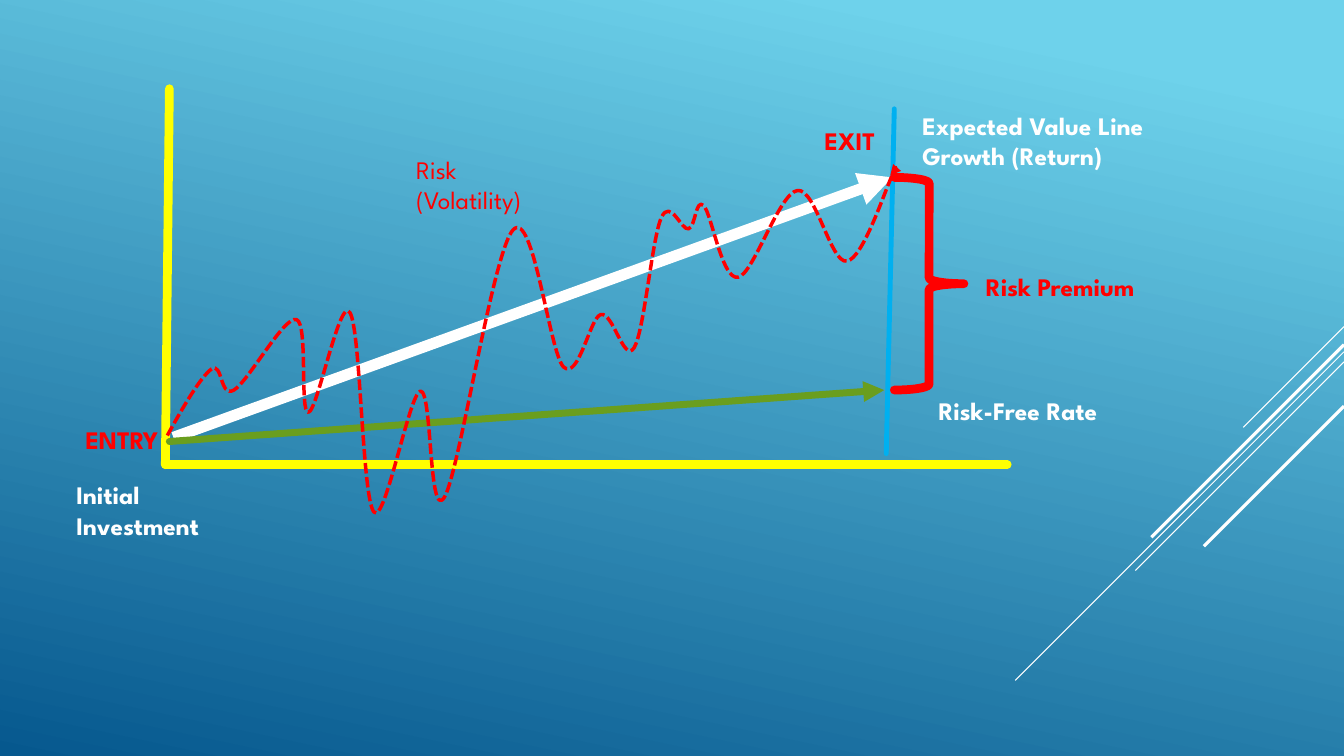
import pptx
import pptx.dml.color
import pptx.enum.dml
import pptx.enum.shapes
import pptx.enum.text
import pptx.oxml.ns
import pptx.oxml.xmlchemy
import pptx.util
from pptx.util import Inches

RGBColor = pptx.dml.color.RGBColor
WHITE = RGBColor(0xFF, 0xFF, 0xFF)
YELLOW = RGBColor(0xFF, 0xFF, 0x00)
GREEN = RGBColor(0x6A, 0x9E, 0x1F)
BLUE = RGBColor(0x00, 0xB0, 0xF0)
RED = RGBColor(0xFF, 0x00, 0x00)
SKY = RGBColor(0x6E, 0xD2, 0xEB)
NAVY = RGBColor(0x06, 0x58, 0x8E)
FONT = "League Spartan"

# Diagonal accents at the right edge: top, horizontal run, weight
RIGHT_EDGE = 13.33
ACCENTS = [(3.24, 1.0, 0.75), (3.49, 3.26, 0.75), (3.59, 2.07, 0.75),
           (3.42, 1.91, 2.25), (4.03, 1.39, 2.25)]

# Chart lines: start, end, colour, weight, arrowhead, round ends
CHART_LINES = [
    ((1.68, 0.88), (1.64, 4.61), YELLOW, 6.25, False, True),
    ((9.99, 4.61), (1.64, 4.61), YELLOW, 6.25, False, True),
    ((1.72, 4.34), (8.85, 1.76), WHITE, 8, True, False),
    ((1.68, 4.38), (8.77, 3.87), GREEN, 5, True, True),
    ((8.87, 1.08), (8.79, 4.5), BLUE, 3.5, False, True),
]

# Labels: paragraphs, left, top, width, height, colour, bold
LABELS = [
    (["Expected Value Line Growth (Return)"], 9.05, 1.04, 2.92, 0.71, WHITE, True),
    (["EXIT"], 8.08, 1.19, 1.53, 0.4, RED, True),
    (["ENTRY"], 0.75, 4.16, 1.53, 0.4, RED, True),
    (["Initial", "Investment"], 0.66, 4.71, 2.92, 0.71, WHITE, True),
    (["Risk-Free Rate"], 9.21, 3.87, 2.92, 0.4, WHITE, True),
    (["Risk Premium"], 9.68, 2.64, 2.92, 0.4, RED, True),
    (["Risk (Volatility)"], 4.03, 1.48, 1.51, 0.71, RED, False),
]

# Volatility curve: each row is two control points and an end point
CURVE_START = (1.66, 4.32)
CURVE = [
    ((1.82, 4.03), (1.99, 3.74), (2.1, 3.66)),
    ((2.21, 3.59), (2.18, 3.95), (2.32, 3.87)),
    ((2.46, 3.79), (2.82, 3.13), (2.94, 3.17)),
    ((3.06, 3.2), (2.97, 4.1), (3.06, 4.09)),
    ((3.15, 4.08), (3.37, 2.93), (3.47, 3.1)),
    ((3.58, 3.26), (3.59, 4.94), (3.71, 5.08)),
    ((3.82, 5.21), (4.06, 3.9), (4.17, 3.88)),
    ((4.29, 3.86), (4.25, 5.2), (4.41, 4.93)),
    ((4.56, 4.67), (4.89, 2.49), (5.09, 2.28)),
    ((5.29, 2.06), (5.45, 3.5), (5.59, 3.64)),
    ((5.74, 3.78), (5.85, 3.15), (5.96, 3.12)),
    ((6.08, 3.09), (6.19, 3.61), (6.29, 3.45)),
    ((6.39, 3.29), (6.47, 2.35), (6.56, 2.16)),
    ((6.65, 1.96), (6.76, 2.29), (6.83, 2.27)),
    ((6.9, 2.25), (6.9, 1.96), (6.98, 2.04)),
    ((7.06, 2.12), (7.16, 2.78), (7.32, 2.75)),
    ((7.47, 2.73), (7.73, 1.91), (7.91, 1.89)),
    ((8.09, 1.86), (8.24, 2.62), (8.4, 2.59)),
    ((8.56, 2.57), (8.78, 1.88), (8.85, 1.74)),
    ((8.92, 1.59), (8.83, 1.74), (8.83, 1.74)),
]


def new_element(tag):
    return pptx.oxml.xmlchemy.OxmlElement(tag)


def style_line(shape, color, weight, arrow=False, rounded=False):
    shape.line.color.rgb = color
    shape.line.width = pptx.util.Pt(weight)
    outline = shape._element.spPr.find(pptx.oxml.ns.qn("a:ln"))
    if rounded:
        outline.set("cap", "rnd")
    if arrow:
        tail = new_element("a:tailEnd")
        tail.set("type", "triangle")
        outline.append(tail)


def add_line(page, start, end, color, weight, arrow=False, rounded=False):
    line = page.shapes.add_connector(
        pptx.enum.shapes.MSO_CONNECTOR.STRAIGHT,
        *(Inches(value) for value in (*start, *end)))
    style_line(line, color, weight, arrow, rounded)
    line._element.spPr.append(new_element("a:effectLst"))


def add_label(page, lines, left, top, width, height, color, bold):
    box = page.shapes.add_textbox(*map(Inches, (left, top, width, height)))
    frame = box.text_frame
    frame.word_wrap = True
    frame.auto_size = pptx.enum.text.MSO_AUTO_SIZE.SHAPE_TO_FIT_TEXT
    frame.text = "\n".join(lines)
    for para in frame.paragraphs:
        para.font.name = FONT
        para.font.size = pptx.util.Pt(18)
        para.font.bold = bold
        para.font.color.rgb = color


def add_curve(page):
    points = [tuple(map(Inches, point)) for row in CURVE for point in row]
    builder = page.shapes.build_freeform(*map(Inches, CURVE_START))
    builder.add_line_segments(points, close=False)
    curve = builder.convert_to_shape()
    # Turn every three straight segments into one cubic segment
    segments = list(curve._element.iter(pptx.oxml.ns.qn("a:lnTo")))
    for first in range(0, len(segments), 3):
        cubic = new_element("a:cubicBezTo")
        segments[first].addprevious(cubic)
        for segment in segments[first:first + 3]:
            cubic.append(segment[0])
            segment.getparent().remove(segment)
    curve.shadow.inherit = False
    curve.fill.background()
    curve.line.dash_style = pptx.enum.dml.MSO_LINE.SQUARE_DOT
    style_line(curve, RED, 2.5, arrow=True)


def main():
    deck = pptx.Presentation()
    deck.slide_width, deck.slide_height = Inches(13.33), Inches(7.5)
    page = deck.slides.add_slide(deck.slide_layouts[6])

    # Background
    fill = page.background.fill
    fill.gradient()
    fill.gradient_angle = 360 - 102
    for stop, position, color in zip(fill.gradient_stops, (0.1, 1), (SKY, NAVY)):
        stop.position = position
        stop.color.rgb = color

    # Accents, axes and arrows
    for top, run, weight in ACCENTS:
        add_line(page, (RIGHT_EDGE, top), (RIGHT_EDGE - run, top + run), WHITE, weight)
    for line in CHART_LINES:
        add_line(page, *line)

    # Risk premium brace
    brace = page.shapes.add_shape(pptx.enum.shapes.MSO_SHAPE.RIGHT_BRACE,
                                  *map(Inches, (8.87, 1.76, 0.69, 2.11)))
    brace.shadow.inherit = False
    brace.fill.background()
    style_line(brace, RED, 6.25, rounded=True)

    # Volatility curve and labels
    add_curve(page)
    for label in LABELS:
        add_label(page, *label)

    deck.save("out.pptx")


if __name__ == "__main__":
    main()
